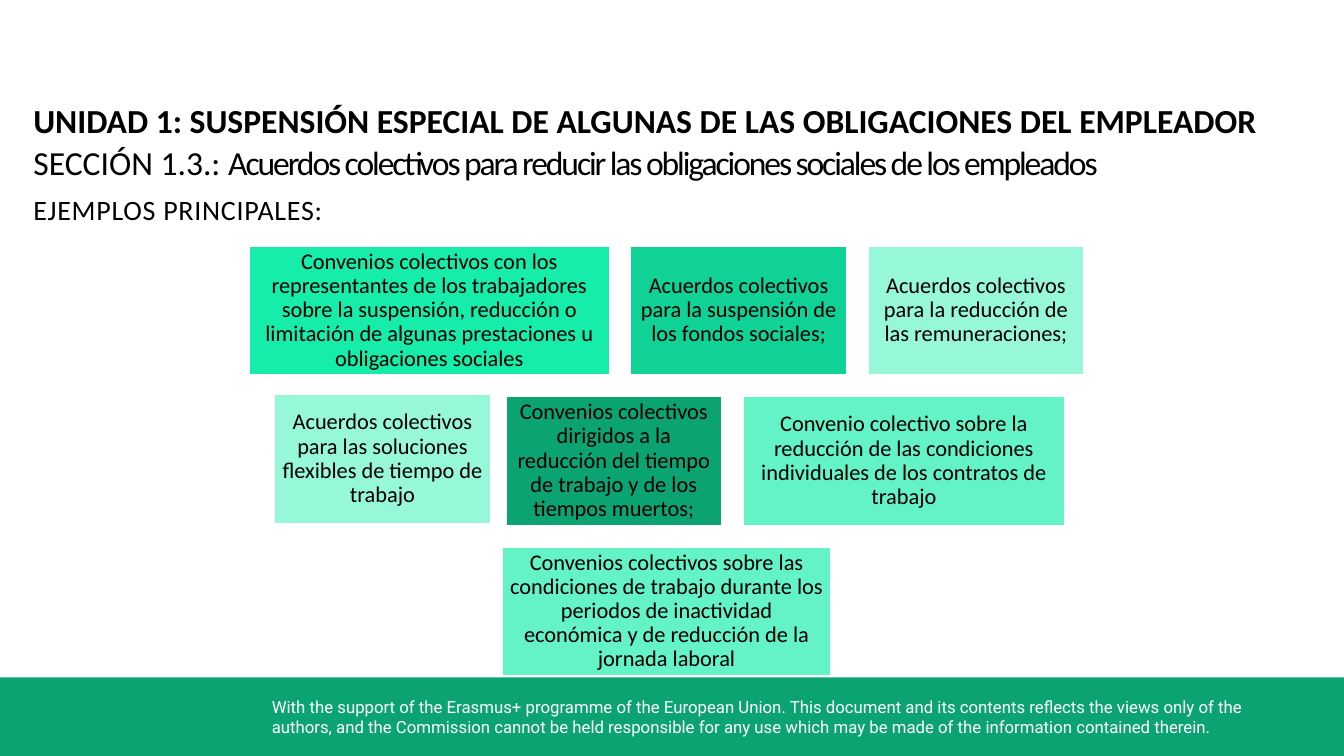
from pptx import Presentation
from pptx import util as u
from pptx.dml.color import RGBColor
from pptx.enum import shapes, text

COLORS = {
    "black": "000000", "white": "FFFFFF", "forest": "0CA373", "emerald": "10D296",
    "bright": "17EDAB", "mint": "63F3C6", "pale": "97F7D9",
}
TITLE = [
    [("UNIDAD 1: SUSPENSIÓN ESPECIAL DE ALGUNAS DE LAS OBLIGACIONES DEL EMPLEADOR", True, 0)],
    [("SECCIÓN 1.3.: ", False, 0),
     ("Acuerdos colectivos para reducir las obligaciones sociales de los empleados", False, -150)],
]
SUBTITLE = "EJEMPLOS PRINCIPALES:"
FOOTER = ("With the support of the Erasmus+ programme of the European Union. This document and its "
          "contents reflects the views only of the authors, and the Commission cannot be held "
          "responsible for any use which may be made of the information contained therein.")
NARROW = 5.44
ROWS = [
    [("Convenios colectivos con los representantes de los trabajadores sobre la suspensión, "
      "reducción o limitación de algunas prestaciones u obligaciones sociales", 9.07, "bright", (0, 0)),
     ("Acuerdos colectivos para la suspensión de los fondos sociales;", NARROW, "emerald", (0, 0)),
     ("Acuerdos colectivos para la reducción de las remuneraciones;", NARROW, "pale", (0, 0))],
    [("Acuerdos colectivos para las soluciones flexibles de tiempo de trabajo",
      NARROW, "pale", (0.15, -0.05)),
     ("Convenios colectivos dirigidos a la reducción del tiempo de trabajo y de los tiempos muertos;",
      NARROW, "forest", (0, 0)),
     ("Convenio colectivo sobre la reducción de las condiciones individuales de los contratos de trabajo",
      8.1, "mint", (0, 0))],
    [("Convenios colectivos sobre las condiciones de trabajo durante los periodos de inactividad "
      "económica y de reducción de la jornada laboral", 8.28, "mint", (0, 0))],
]
SLIDE_WIDTH, SLIDE_HEIGHT = 33.87, 19.05
FOOTER_TOP = 17.07
ROWS_CENTER, ROWS_TOP = 16.8, 6.2
BOX_HEIGHT, GAP = 3.25, 0.54


def color(name):
    return RGBColor.from_string(COLORS[name])


def style(span, size, name="black", face="Calibri", bold=False, spacing=0):
    span.font.size = u.Pt(size)
    span.font.name = face
    span.font.bold = bold
    span.font.color.rgb = color(name)
    if spacing:
        span.font._element.set("spc", str(spacing))


def set_insets(frame, left, top, right, bottom):
    frame.margin_left, frame.margin_top = u.Cm(left), u.Cm(top)
    frame.margin_right, frame.margin_bottom = u.Cm(right), u.Cm(bottom)
    frame.word_wrap = True


def add_rectangle(page, left, top, width, height, fill):
    box = page.shapes.add_shape(shapes.MSO_SHAPE.RECTANGLE,
                                u.Cm(left), u.Cm(top), u.Cm(width), u.Cm(height))
    box.shadow.inherit = False
    box.fill.solid()
    box.fill.fore_color.rgb = color(fill)
    return box


def add_footer(page):
    band = add_rectangle(page, 0, FOOTER_TOP, SLIDE_WIDTH, SLIDE_HEIGHT - FOOTER_TOP, "forest")
    band.line.fill.background()
    box = page.shapes.add_textbox(u.Cm(6.6), u.Cm(17.42), u.Cm(26.47), u.Cm(1.27))
    box.text_frame.word_wrap = True
    box.text_frame.text = FOOTER
    style(box.text_frame.paragraphs[0].runs[0], 12, "white", "Roboto")


def add_headings(page):
    title = page.shapes.title
    title.left, title.top, title.width, title.height = u.Cm(0.84), u.Cm(2.49), u.Cm(31.01), u.Cm(3.18)
    frame = title.text_frame
    set_insets(frame, 0, 0.03, 0, 0)
    frame.auto_size = text.MSO_AUTO_SIZE.NONE
    frame.vertical_anchor = text.MSO_ANCHOR.TOP
    for index, parts in enumerate(TITLE):
        para = frame.add_paragraph() if index else frame.paragraphs[0]
        para.alignment = text.PP_ALIGN.LEFT
        para.line_spacing = 1.0
        if index:
            para.space_before = u.Pt(1)
        for words, bold, spacing in parts:
            span = para.add_run()
            span.text = words
            style(span, 24, bold=bold, spacing=spacing)

    box = page.shapes.add_textbox(u.Cm(0.84), u.Cm(4.8), u.Cm(13.74), u.Cm(0.89))
    set_insets(box.text_frame, 0, 0.05, 0, 0)
    box.text_frame.text = SUBTITLE
    style(box.text_frame.paragraphs[0].runs[0], 20, spacing=50)


def add_examples(page):
    for number, row in enumerate(ROWS):
        row_width = sum(item[1] for item in row) + GAP * (len(row) - 1)
        left = ROWS_CENTER - row_width / 2
        top = ROWS_TOP + number * (BOX_HEIGHT + GAP)
        for words, width, fill, (shift_x, shift_y) in row:
            box = add_rectangle(page, left + shift_x, top + shift_y, width, BOX_HEIGHT, fill)
            box.line.color.rgb = color("white")
            box.line.width = u.Pt(1)
            frame = box.text_frame
            set_insets(frame, 0.17, 0.17, 0.17, 0.17)
            frame.vertical_anchor = text.MSO_ANCHOR.MIDDLE
            frame.text = words
            para = frame.paragraphs[0]
            para.alignment = text.PP_ALIGN.CENTER
            para.line_spacing = 0.9
            style(para.runs[0], 16)
            left += width + GAP


def main():
    deck = Presentation()
    deck.slide_width, deck.slide_height = u.Cm(SLIDE_WIDTH), u.Cm(SLIDE_HEIGHT)
    page = deck.slides.add_slide(deck.slide_layouts[5])
    add_footer(page)
    add_headings(page)
    add_examples(page)
    deck.save("out.pptx")


if __name__ == "__main__":
    main()
